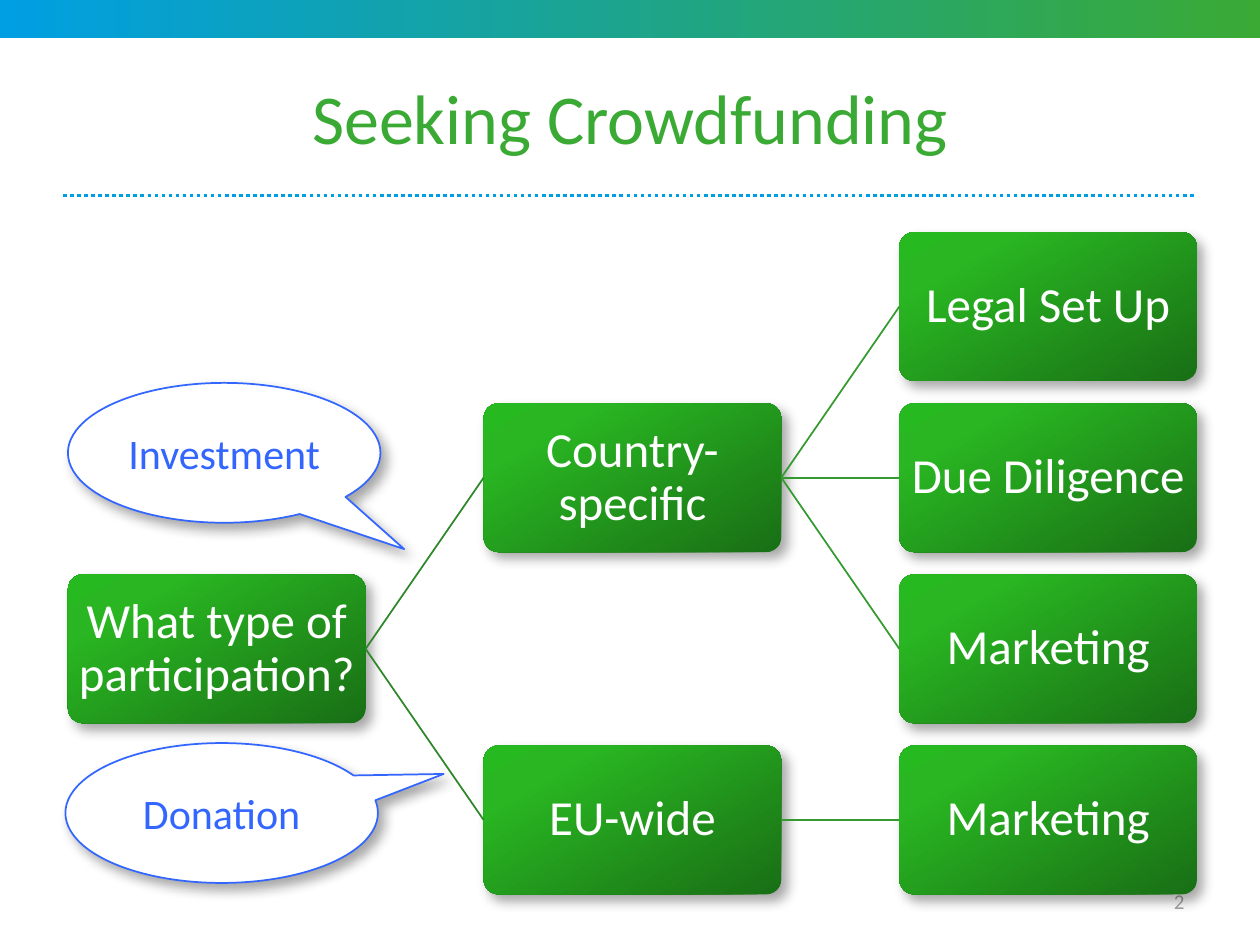
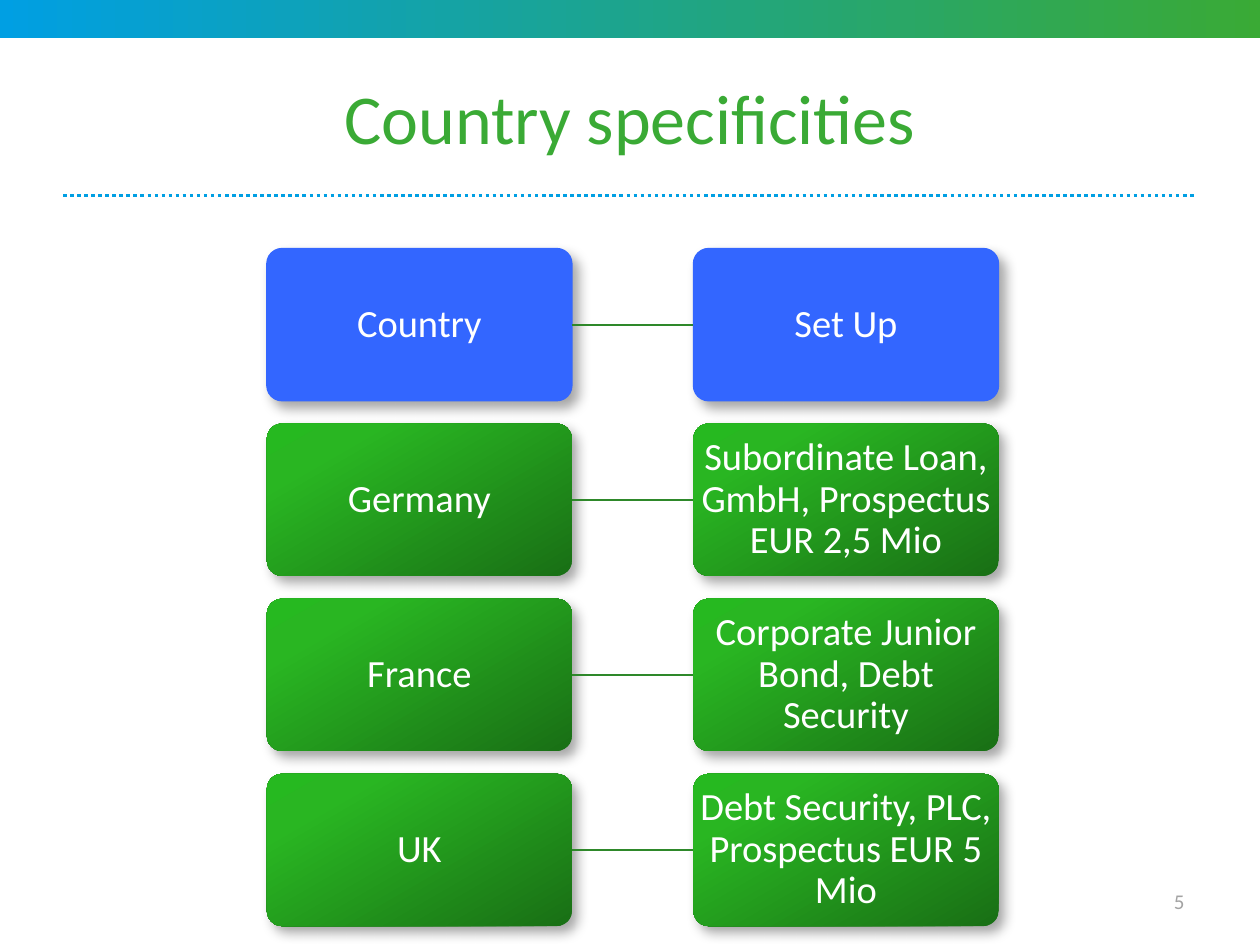
import pptx
import pptx.dml.color
import pptx.enum.dml
import pptx.enum.shapes
import pptx.enum.text
import pptx.oxml
import pptx.oxml.ns
import pptx.util

Cm = pptx.util.Cm
Pt = pptx.util.Pt
RGBColor = pptx.dml.color.RGBColor
Shape = pptx.enum.shapes.MSO_SHAPE
Align = pptx.enum.text.PP_ALIGN
qn = pptx.oxml.ns.qn

GREEN = RGBColor(0x3A, 0xAA, 0x35)
SKY = RGBColor(0x00, 0x9F, 0xE3)
BLUE = RGBColor(0x33, 0x66, 0xFF)
WHITE = RGBColor(0xFF, 0xFF, 0xFF)
GREY = RGBColor(0xA3, 0xA3, 0xA3)
BOX_DARK = RGBColor(0x19, 0x6F, 0x15)
BOX_MID = RGBColor(0x29, 0xB6, 0x22)
BOX_BRIGHT = RGBColor(0x26, 0xB9, 0x20)
LINK_DARK = RGBColor(0x2E, 0x88, 0x2A)
LINK_LIGHT = RGBColor(0x35, 0x9A, 0x30)

BAND_STOPS = ((0, SKY), (100, GREEN))
BOX_STOPS = ((0, BOX_DARK), (80, BOX_MID), (100, BOX_BRIGHT))
LEFT_SITE, RIGHT_SITE = 1, 3


class Pages:
    """Holds the deck, its style and the page being drawn."""

    font_name = "Calibri"

    def __init__(self):
        self.deck = pptx.Presentation()
        self.deck.slide_width = Cm(25.4)
        self.deck.slide_height = Cm(19.05)
        self.page = None

    def start(self, title, number):
        self.page = self.deck.slides.add_slide(self.deck.slide_layouts[6])
        band = self.shape(Shape.RECTANGLE, -0.02, 0, 25.5, 0.77)
        self.gradient(band, BAND_STOPS, 0)
        band.line.fill.background()
        rule = self.line(SKY, 2, Cm(1.27), Cm(3.94), Cm(24.13), Cm(3.94))
        rule.line.dash_style = pptx.enum.dml.MSO_LINE.ROUND_DOT
        self.label(title, 1.27, 0.76, 22.86, 3.18, 40, GREEN, Align.CENTER)
        self.label(number, 22.71, 17.65, 1.42, 1.02, 12, GREY, Align.RIGHT)

    def set_text(self, shape, text, size, color, align=Align.CENTER):
        frame = shape.text_frame
        frame.text = text
        frame.word_wrap = True
        frame.vertical_anchor = pptx.enum.text.MSO_ANCHOR.MIDDLE
        para = frame.paragraphs[0]
        para.alignment = align
        for span in para.runs:
            span.font.name = self.font_name
            span.font.size = Pt(size)
            span.font.color.rgb = color

    def label(self, text, left, top, width, height, size, color, align):
        box = self.page.shapes.add_textbox(Cm(left), Cm(top), Cm(width), Cm(height))
        self.set_text(box, text, size, color, align)

    def shape(self, kind, left, top, width, height):
        shape = self.page.shapes.add_shape(
            kind, Cm(left), Cm(top), Cm(width), Cm(height))
        shape.shadow.inherit = False
        return shape

    def gradient(self, shape, stops, angle):
        shape.fill.gradient()
        shape.fill.gradient_angle = angle
        stop_list = next(shape._element.spPr.iter(qn("a:gsLst")))
        stop_list.clear()
        for position, color in stops:
            stop_list.append(pptx.oxml.parse_xml(
                f'<a:gs {pptx.oxml.ns.nsdecls("a")} pos="{position * 1000}">'
                f'<a:srgbClr val="{color}"/></a:gs>'))

    def solid(self, shape, fill, line, width):
        shape.fill.solid()
        shape.fill.fore_color.rgb = fill
        shape.line.color.rgb = line
        shape.line.width = Pt(width)

    def cast_shadow(self, shape):
        effects = shape._element.spPr.find(qn("a:effectLst"))
        effects.append(pptx.oxml.parse_xml(
            f'<a:outerShdw {pptx.oxml.ns.nsdecls("a")} blurRad="{Pt(7)}" '
            f'dist="{Pt(5)}" dir="3000000" rotWithShape="0">'
            '<a:srgbClr val="000000"><a:alpha val="35000"/></a:srgbClr>'
            '</a:outerShdw>'))

    def box(self, text, left, top, width, height, size, fill=None):
        box = self.shape(Shape.ROUNDED_RECTANGLE, left, top, width, height)
        box.adjustments[0] = 0.1
        if fill is None:
            self.gradient(box, BOX_STOPS, 120)
            box.line.fill.background()
        else:
            self.solid(box, fill, fill, 0.75)
        self.cast_shadow(box)
        self.set_text(box, text, size, WHITE)
        frame = box.text_frame
        frame.margin_left = frame.margin_right = Cm(0.05)
        frame.margin_top = frame.margin_bottom = Cm(0.05)
        frame.paragraphs[0].line_spacing = 0.9
        return box

    def callout(self, text, left, top, tip):
        callout = self.shape(Shape.OVAL_CALLOUT, left, top, 6.3, 2.82)
        callout.adjustments[0], callout.adjustments[1] = tip
        self.solid(callout, WHITE, BLUE, 1)
        self.cast_shadow(callout)
        self.set_text(callout, text, 24, BLUE)

    def line(self, color, width, *ends):
        line = self.page.shapes.add_connector(
            pptx.enum.shapes.MSO_CONNECTOR.STRAIGHT, *ends)
        line.line.color.rgb = color
        line.line.width = Pt(width)
        line._element.spPr.append(pptx.oxml.parse_xml(
            f'<a:effectLst {pptx.oxml.ns.nsdecls("a")}/>'))
        return line

    def link(self, source, target, color):
        line = self.line(color, 1, 0, 0, 0, 0)
        line.begin_connect(source, RIGHT_SITE)
        line.end_connect(target, LEFT_SITE)


def draw_decision_tree(pages):
    pages.start("Seeking Crowdfunding", "2")

    def node(text, column, row):
        return pages.box(text, 1.37 + 8.38 * column, 4.68 + 3.45 * row, 6, 3, 28)

    root = node("What type of participation?", 0, 2)
    country = node("Country-specific", 1, 1)
    union = node("EU-wide", 1, 3)
    for branch in (country, union):
        pages.link(root, branch, LINK_DARK)
    steps = ((country, "Legal Set Up"), (country, "Due Diligence"),
             (country, "Marketing"), (union, "Marketing"))
    for row, (branch, text) in enumerate(steps):
        pages.link(branch, node(text, 2, row), LINK_LIGHT)
    pages.callout("Investment", 1.37, 7.72, (0.576, 0.688))
    pages.callout("Donation", 1.32, 14.98, (0.71, -0.279))


def draw_country_pairs(pages):
    pages.start("Country specificities", "5")
    pairs = (("Country", "Set Up"),
             ("Germany", "Subordinate Loan, GmbH, Prospectus EUR 2,5 Mio"),
             ("France", "Corporate Junior Bond, Debt Security"),
             ("UK", "Debt Security, PLC, Prospectus EUR 5 Mio"))
    for row, pair in enumerate(pairs):
        fill = BLUE if row == 0 else None
        country, setup = (
            pages.box(text, 5.38 + 8.6 * column, 5.01 + 3.53 * row,
                      6.15, 3.07, 22, fill)
            for column, text in enumerate(pair))
        pages.link(country, setup, LINK_DARK)


def main():
    pages = Pages()
    draw_decision_tree(pages)
    draw_country_pairs(pages)
    pages.deck.save("out.pptx")


if __name__ == "__main__":
    main()
